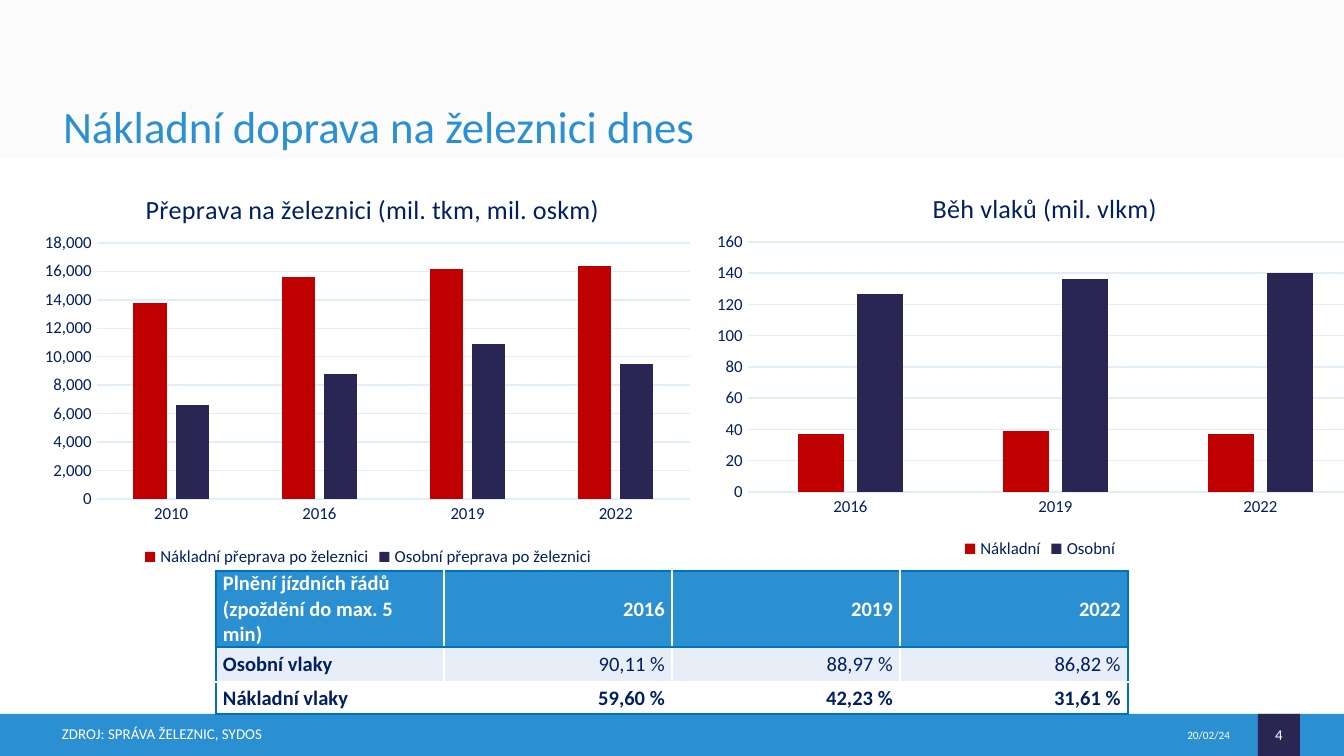
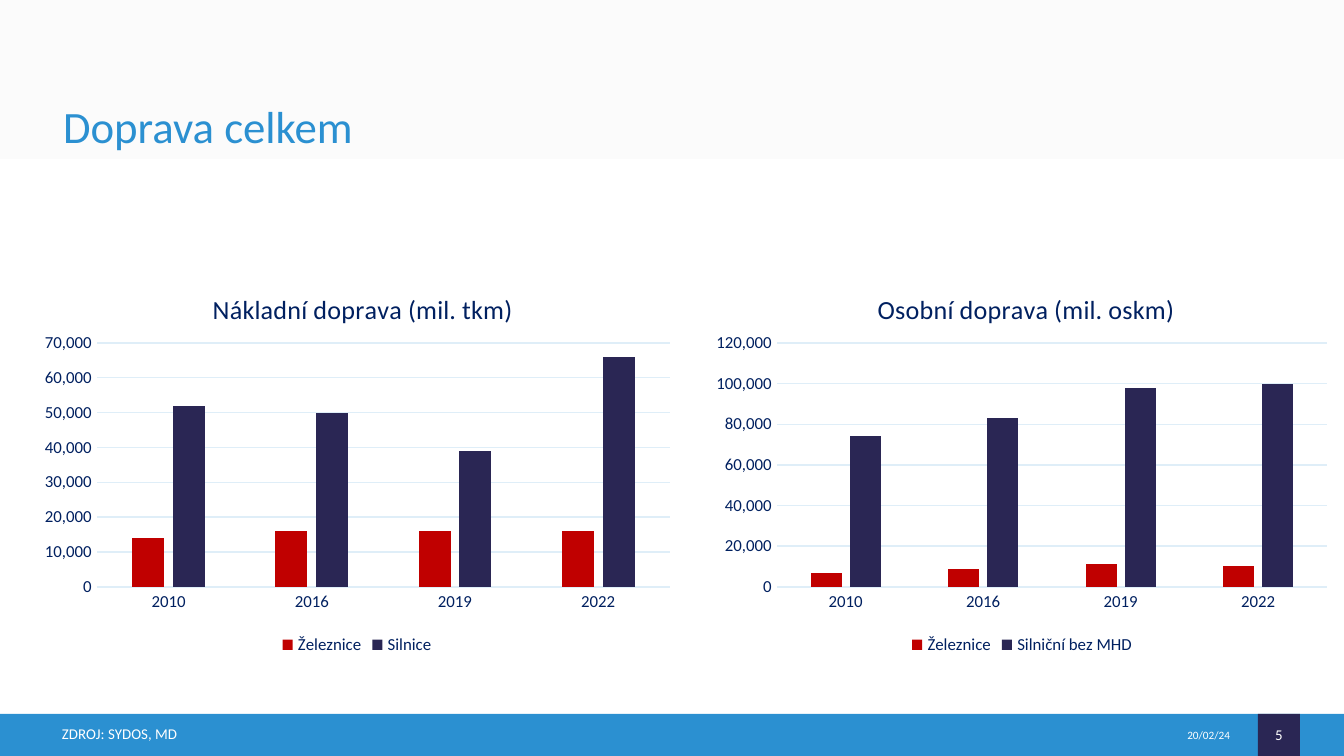
"""Build two slides on Czech rail freight with column charts and a punctuality table."""
from pptx import Presentation
from pptx import util as u
from pptx.chart.data import CategoryChartData
from pptx.dml.color import RGBColor
from pptx.enum import chart as c, shapes, text
from pptx.oxml import parse_xml
from pptx.oxml.ns import nsdecls, qn
from pptx.oxml.xmlchemy import OxmlElement

PX = 914400 / 134.4
FONT = "Calibri"
WHITE = RGBColor(0xFF, 0xFF, 0xFF)
GREY = RGBColor(0xF2, 0xF2, 0xF2)
BLUE = RGBColor(0x2B, 0x90, 0xD1)
NAVY = RGBColor(0x2A, 0x26, 0x54)
INK = RGBColor(0x00, 0x20, 0x60)
RED = RGBColor(0xC0, 0x00, 0x00)
PALE = RGBColor(0xE8, 0xEE, 0xF7)
GRID = RGBColor(0xDF, 0xEE, 0xF8)
EDGE = RGBColor(0x00, 0x70, 0xC0)

BANDS = [
    ((0, 0, 1344, 159), GREY),
    ((0, 714, 1344, 42), BLUE),
    ((1258, 714, 42, 42), NAVY),
]
YEARS = ["2010", "2016", "2019", "2022"]
SLIDES = [
    {
        "title": "Nákladní doprava na železnici dnes",
        "source": "ZDROJ: SPRÁVA ŽELEZNIC, SYDOS",
        "number": "4",
        "table": [
            ["Plnění jízdních řádů (zpoždění do max. 5 min)", "2016", "2019", "2022"],
            ["Osobní vlaky", "90,11 %", "88,97 %", "86,82 %"],
            ["Nákladní vlaky", "59,60 %", "42,23 %", "31,61 %"],
        ],
        "charts": [
            {
                "title": "Přeprava na železnici (mil. tkm, mil. oskm)",
                "title_left": 141,
                "frame": (32, 163, 672, 409),
                "plot": (97, 243, 593, 256),
                "scale": (18000, 2000),
                "years": YEARS,
                "series": {
                    "Nákladní přeprava po železnici": [13800, 15600, 16200, 16400],
                    "Osobní přeprava po železnici": [6600, 8800, 10900, 9500],
                },
            },
            {
                "title": "Běh vlaků (mil. vlkm)",
                "title_left": 928,
                "frame": (704, 161, 672, 403),
                "plot": (748, 242, 615, 250),
                "scale": (160, 20),
                "years": YEARS[1:],
                "series": {"Nákladní": [37, 39, 37], "Osobní": [127, 136, 140]},
            },
        ],
    },
    {
        "title": "Doprava celkem",
        "source": "ZDROJ: SYDOS, MD",
        "number": "5",
        "table": [],
        "charts": [
            {
                "title": "Nákladní doprava (mil. tkm)",
                "title_left": 208,
                "frame": (32, 262, 650, 398),
                "plot": (97, 343, 573, 244),
                "scale": (70000, 10000),
                "years": YEARS,
                "series": {
                    "Železnice": [14000, 16000, 16000, 16000],
                    "Silnice": [52000, 50000, 39000, 66000],
                },
            },
            {
                "title": "Osobní doprava (mil. oskm)",
                "title_left": 873,
                "frame": (704, 262, 636, 398),
                "plot": (777, 343, 550, 244),
                "scale": (120000, 20000),
                "years": YEARS,
                "series": {
                    "Železnice": [7000, 9000, 11000, 10000],
                    "Silniční bez MHD": [74000, 83000, 98000, 100000],
                },
            },
        ],
    },
]


def write(frame, content, size, color, align, margins):
    """Fill a text frame with one middle-anchored, formatted paragraph."""
    frame.word_wrap = True
    frame.auto_size = text.MSO_AUTO_SIZE.NONE
    frame.vertical_anchor = text.MSO_ANCHOR.MIDDLE
    frame.margin_left, frame.margin_right = (round(m * PX) for m in margins)
    paragraph = frame.paragraphs[0]
    paragraph.text = content
    paragraph.alignment = align
    paragraph.font.name = FONT
    paragraph.font.size = u.Pt(size)
    paragraph.font.color.rgb = color


def place(parent, index, chart_frame, **box):
    """Fix a chart part at a box in slide px, inside the chart frame."""
    previous = parent.find(qn("c:layout"))
    if previous is not None:
        parent.remove(previous)
    left, top, width, height = chart_frame
    fractions = {"x": (box["x"] - left) / width, "y": (box["y"] - top) / height}
    inner = ""
    if "w" in box:
        fractions.update(w=box["w"] / width, h=box["h"] / height)
        inner = '<c:layoutTarget val="inner"/>'
    modes = '<c:xMode val="edge"/><c:yMode val="edge"/>'
    values = "".join(f'<c:{key} val="{value:.4f}"/>' for key, value in fractions.items())
    parent.insert(index, parse_xml(
        f'<c:layout {nsdecls("c")}><c:manualLayout>{inner}{modes}{values}</c:manualLayout></c:layout>'))


presentation = Presentation()
presentation.slide_width = round(1344 * PX)
presentation.slide_height = round(756 * PX)
LEFT, CENTER, RIGHT = text.PP_ALIGN.LEFT, text.PP_ALIGN.CENTER, text.PP_ALIGN.RIGHT

for content in SLIDES:
    slide = presentation.slides.add_slide(presentation.slide_layouts[5])

    for index, (box, color) in enumerate(BANDS):
        band = slide.shapes.add_shape(shapes.MSO_SHAPE.RECTANGLE, *(round(v * PX) for v in box))
        band.shadow.inherit = False
        band.fill.solid()
        band.fill.fore_color.rgb = color
        band.line.fill.background()
        if color == GREY:
            alpha = OxmlElement("a:alpha")
            alpha.set("val", "29000")
            band.fill._xPr.find(qn("a:solidFill"))[0].append(alpha)
        slide.shapes._spTree.insert(2 + index, band._element)

    title = slide.shapes.title
    title.left, title.top, title.width, title.height = (round(v * PX) for v in (63, 93, 1210, 65))
    write(title.text_frame, content["title"], 24, BLUE, LEFT, (0, 13))

    for box, label, size, align, margins in [
        ((930, 715, 313, 40), "20/02/24", 6, RIGHT, (0, 13)),
        ((62, 714, 823, 40), content["source"], 8, LEFT, (0, 0)),
        ((1258, 715, 42, 40), content["number"], 8, CENTER, (0, 0)),
    ]:
        footer = slide.shapes.add_textbox(*(round(v * PX) for v in box))
        write(footer.text_frame, label, size, WHITE, align, margins)

    if content["table"]:
        rows = content["table"]
        box = (216, 571, 912, 102)
        table = slide.shapes.add_table(
            len(rows), len(rows[0]), *(round(v * PX) for v in box)).table
        for row, height in zip(table.rows, (35, 35, 32)):
            row.height = round(height * PX)
        last_row, last_column = len(rows) - 1, len(rows[0]) - 1
        for r, row in enumerate(rows):
            for k, label in enumerate(row):
                cell = table.cell(r, k)
                cell.fill.solid()
                cell.fill.fore_color.rgb = (BLUE, PALE, WHITE)[r]
                cell.vertical_anchor = text.MSO_ANCHOR.MIDDLE
                cell.margin_left = cell.margin_right = round(7 * PX)
                cell.margin_top = cell.margin_bottom = 0
                paragraph = cell.text_frame.paragraphs[0]
                paragraph.text = label
                paragraph.alignment = RIGHT if k else LEFT
                paragraph.font.name = FONT
                paragraph.font.size = u.Pt(11)
                paragraph.font.bold = r != 1 or k == 0
                paragraph.font.color.rgb = INK if r else WHITE
                blue_sides = {"L": k == 0, "R": k == last_column,
                              "T": r <= 1, "B": r in (0, last_row)}
                for index, (side, is_blue) in enumerate(blue_sides.items()):
                    cell._tc.get_or_add_tcPr().insert(index, parse_xml(
                        f'<a:ln{side} {nsdecls("a")} w="12700"><a:solidFill>'
                        f'<a:srgbClr val="{EDGE if is_blue else WHITE}"/>'
                        f'</a:solidFill></a:ln{side}>'))

    for item in content["charts"]:
        data = CategoryChartData(number_format="#,##0")
        data.categories = item["years"]
        for name, values in item["series"].items():
            data.add_series(name, values)
        chart = slide.shapes.add_chart(
            c.XL_CHART_TYPE.COLUMN_CLUSTERED, *(round(v * PX) for v in item["frame"]), data).chart
        chart.font.name = FONT
        chart.font.size = u.Pt(9)
        chart.font.color.rgb = INK

        chart.has_title = True
        paragraph = chart.chart_title.text_frame.paragraphs[0]
        paragraph.text = item["title"]
        paragraph.font.name = FONT
        paragraph.font.size = u.Pt(14)
        paragraph.font.bold = False
        paragraph.font.color.rgb = INK
        left, top, width, height = item["plot"]
        place(chart.chart_title._element, 1, item["frame"], x=item["title_left"], y=top - 57)
        place(chart._chartSpace.chart.plotArea, 0, item["frame"], x=left, y=top, w=width, h=height)

        chart.has_legend = True
        chart.legend.position = c.XL_LEGEND_POSITION.BOTTOM
        chart.legend.include_in_layout = False

        for axis in (chart.category_axis, chart.value_axis):
            axis.major_tick_mark = axis.minor_tick_mark = c.XL_TICK_MARK.NONE
        chart.category_axis.format.line.color.rgb = GRID
        chart.category_axis.format.line.width = u.Pt(0.75)
        value_axis = chart.value_axis
        value_axis.format.line.fill.background()
        value_axis.minimum_scale = 0
        value_axis.maximum_scale, value_axis.major_unit = item["scale"]
        value_axis.tick_labels.number_format = "#,##0"
        value_axis.tick_labels.number_format_is_linked = False
        value_axis.major_gridlines.format.line.color.rgb = GRID
        value_axis.major_gridlines.format.line.width = u.Pt(0.75)

        plot = chart.plots[0]
        plot.gap_width = 219
        plot.overlap = -27
        plot.vary_by_categories = False
        for series, color in zip(plot.series, (RED, NAVY)):
            series.format.fill.solid()
            series.format.fill.fore_color.rgb = color

presentation.save("out.pptx")
